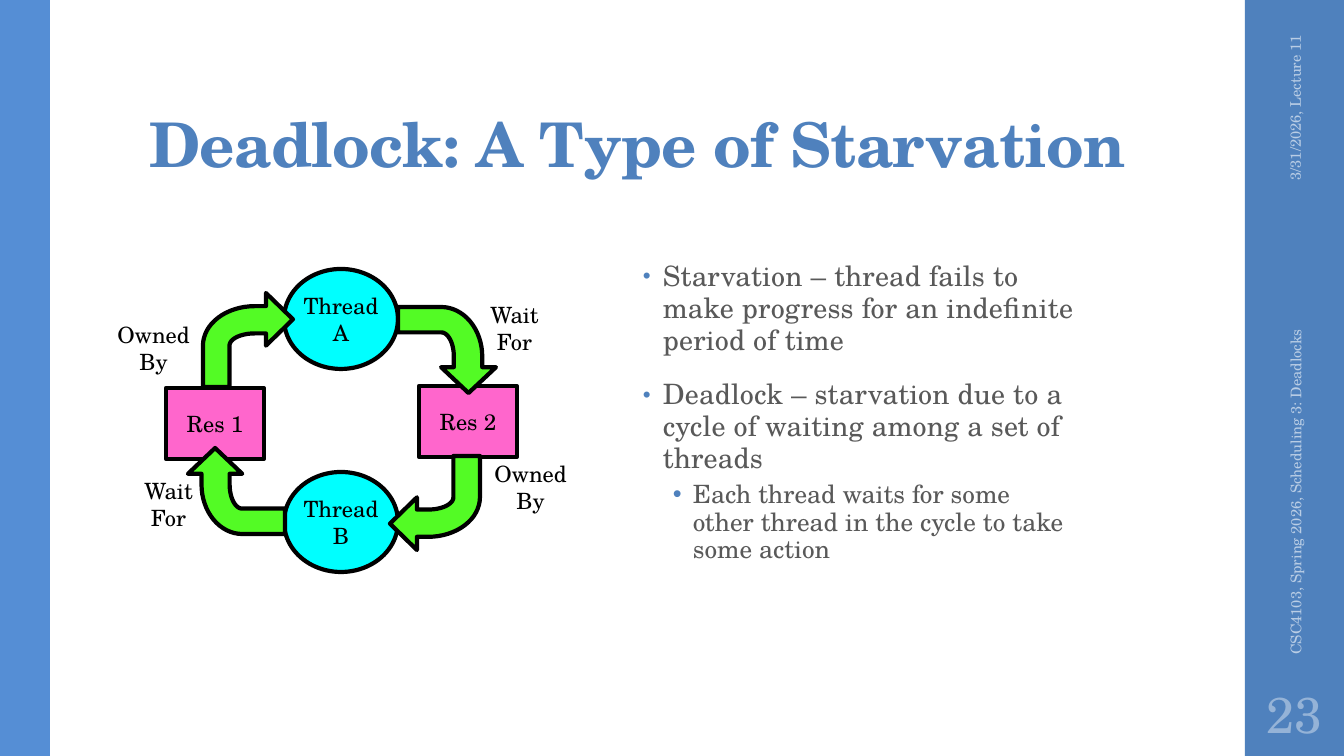
"""Builds a slide on deadlock: a thread and resource cycle beside its definition."""
from math import cos, pi, sin

from lxml import etree
from pptx import Presentation
from pptx.dml.color import RGBColor
from pptx.enum.shapes import MSO_SHAPE as Preset
from pptx.enum.text import MSO_ANCHOR as Anchor, PP_ALIGN as Align
from pptx.oxml.ns import qn
from pptx.util import Emu, Pt

EMU_PER_PX = 914400 / 100.8
FONT = "TeX Gyre Schola"
BLUE = RGBColor(0x4F, 0x81, 0xBD)
LEFT_BLUE = RGBColor(0x55, 0x8E, 0xD5)
FOOTER_BLUE = RGBColor(0xB9, 0xCD, 0xE5)
NUMBER_BLUE = RGBColor(0x95, 0xB3, 0xD7)
GRAY = RGBColor(0x59, 0x59, 0x59)
BLACK = RGBColor(0, 0, 0)
PINK = RGBColor(0xFF, 0x66, 0xCC)
CYAN = RGBColor(0, 0xFF, 0xFF)
GREEN = RGBColor(0x53, 0xFB, 0x25)


def px(length):
    """Turn pixels into EMU."""
    return Emu(round(length * EMU_PER_PX))


def paint(shape, fill, outlined=True):
    """Give a shape a flat fill and, if wanted, a black outline."""
    shape.shadow.inherit = False
    shape.fill.solid()
    shape.fill.fore_color.rgb = fill
    if outlined:
        shape.line.color.rgb = BLACK
        shape.line.width = Pt(3)
    else:
        shape.line.fill.background()


def style(paragraph, size, color, align=Align.LEFT, bold=False, spacing=0):
    """Format a paragraph and its runs."""
    paragraph.alignment = align
    for run in paragraph.runs:
        run.font.name = FONT
        run.font.size = Pt(size)
        run.font.bold = bold
        run.font.color.rgb = color
        run.font._element.set("spc", str(spacing))


def write(shape, text, size, color, align=Align.CENTER, anchor=Anchor.MIDDLE, wrap=False):
    """Fill a shape with uniformly styled text."""
    frame = shape.text_frame
    frame.text = text
    frame.word_wrap = wrap
    frame.vertical_anchor = anchor
    for paragraph in frame.paragraphs:
        style(paragraph, size, color, align)


def add_panel(slide, box, fill):
    """Draw a plain side panel."""
    paint(slide.shapes.add_shape(Preset.RECTANGLE, *map(px, box)), fill, outlined=False)


def add_node(slide, preset, box, fill, text):
    """Draw a thread or resource."""
    node = slide.shapes.add_shape(preset, *map(px, box))
    paint(node, fill)
    write(node, text, 16, BLACK)


def add_text(slide, box, text, size, color, rotation=0, **options):
    """Add a text box, turned if needed."""
    text_box = slide.shapes.add_textbox(*map(px, box))
    text_box.rotation = rotation
    write(text_box, text, size, color, **options)
    return text_box


def bend(left, top, steps=16):
    """List the points of a quarter ellipse from its left end to its top."""
    right, bottom = 0.575, 0.56
    angles = [pi / 2 * step / steps for step in range(steps + 1)]
    return [(right - (right - left) * cos(a), bottom - (bottom - top) * sin(a))
            for a in angles]


def add_bent_arrow(slide, box, quarter_turns):
    """Draw a bent arrow inside a box, turned clockwise by quarters."""
    left, top, width, height = box
    outline = [(0, 1), *bend(0, 0.14), (0.7, 0.14), (0.7, 0), (1, 0.28),
               (0.7, 0.56), (0.7, 0.43), *reversed(bend(0.295, 0.43)), (0.295, 1)]
    for _ in range(quarter_turns):
        outline = [(1 - y, x) for x, y in outline]
    points = [(px(left + x * width), px(top + y * height)) for x, y in outline]
    builder = slide.shapes.build_freeform(*points[0])
    builder.add_line_segments(points[1:], close=True)
    paint(builder.convert_to_shape(), GREEN)


def add_bullet(paragraph, margin, hanging, percent):
    """Put a blue bullet before a paragraph."""
    properties = paragraph._p.get_or_add_pPr()
    properties.set("marL", str(px(margin)))
    properties.set("indent", str(-px(hanging)))
    color = etree.SubElement(properties, qn("a:buClr"))
    etree.SubElement(color, qn("a:srgbClr"), val=str(BLUE))
    etree.SubElement(properties, qn("a:buSzPct"), val=str(percent * 1000))
    etree.SubElement(properties, qn("a:buFont"), typeface="Arial")
    etree.SubElement(properties, qn("a:buChar"), char="•")


def add_definitions(slide, box, items):
    """List the definitions as two levels of bullets."""
    frame = slide.shapes.add_textbox(*map(px, box)).text_frame
    frame.word_wrap = True
    frame.text = "\n".join(text for _, text in items)
    for index, (paragraph, (level, _)) in enumerate(zip(frame.paragraphs, items)):
        size, margin, percent, before, after, line, spacing = (
            (18, 50, 100, 3, 3, 0.9, 0) if level else (20, 20, 80, 14, 2, 0.95, 10))
        paragraph.level = level
        paragraph.line_spacing = line
        paragraph.space_before = Pt(before if index else 0)
        paragraph.space_after = Pt(after)
        add_bullet(paragraph, margin, 20, percent)
        style(paragraph, size, GRAY, spacing=spacing)


def set_title(slide, box, text):
    """Place and format the slide title."""
    title = slide.shapes.title
    title.left, title.top, title.width, title.height = map(px, box)
    write(title, text, 44, BLUE, Align.LEFT, Anchor.BOTTOM, wrap=True)
    frame = title.text_frame
    frame.margin_left = frame.margin_right = px(10)
    frame.margin_top, frame.margin_bottom = px(3), px(5)
    heading = frame.paragraphs[0]
    heading.line_spacing = 0.9
    style(heading, 44, BLUE, bold=True, spacing=-50)


def main():
    """Build and save the slide."""
    deck = Presentation()
    deck.slide_width, deck.slide_height = px(1344), px(756)
    slide = deck.slides.add_slide(deck.slide_layouts[5])

    add_panel(slide, (1245, 0, 99, 756), BLUE)
    add_panel(slide, (0, 0, 50, 756), LEFT_BLUE)
    set_title(slide, (139, 32, 1068, 154), "Deadlock: A Type of Starvation")
    add_definitions(slide, (633, 256, 454, 425), [
        (0, "Starvation – thread fails to make progress for an indefinite period of time"),
        (0, "Deadlock – starvation due to a cycle of waiting among a set of threads"),
        (1, "Each thread waits for some other thread in the cycle to take some action"),
    ])
    add_text(slide, (1190, 110, 210, 40), "3/31/2026, Lecture 11", 10.5, FOOTER_BLUE,
             rotation=270, align=Align.RIGHT, wrap=True)
    add_text(slide, (1098, 447, 395, 40), "CSC4103, Spring 2026, Scheduling 3: Deadlocks",
             10.5, FOOTER_BLUE, rotation=270, align=Align.LEFT, wrap=True)
    number = add_text(slide, (1245, 680, 99, 66), "23", 36, NUMBER_BLUE, wrap=True)
    number.text_frame.margin_left = number.text_frame.margin_right = px(5)

    for left, top, resource in ((419, 386, "Res 2"), (166, 388, "Res 1")):
        add_node(slide, Preset.RECTANGLE, (left, top, 98, 71), PINK, resource)
    for top, thread in ((472, "Thread\nB"), (269, "Thread\nA")):
        add_node(slide, Preset.OVAL, (284, top, 114, 100), CYAN, thread)

    arrow_boxes = ((203, 293, 90, 94), (398, 307, 98, 86),
                   (390, 456, 90, 94), (188, 448, 97, 86))
    for quarter_turns, box in enumerate(arrow_boxes):
        add_bent_arrow(slide, box, quarter_turns)

    for left, top, width, label in ((480, 296, 69, "Wait\nFor"), (134, 472, 69, "Wait\nFor"),
                                    (484, 455, 93, "Owned\nBy"), (107, 316, 93, "Owned\nBy")):
        add_text(slide, (left, top, width, 64), label, 16, BLACK, anchor=Anchor.TOP)

    deck.save("out.pptx")


if __name__ == "__main__":
    main()
